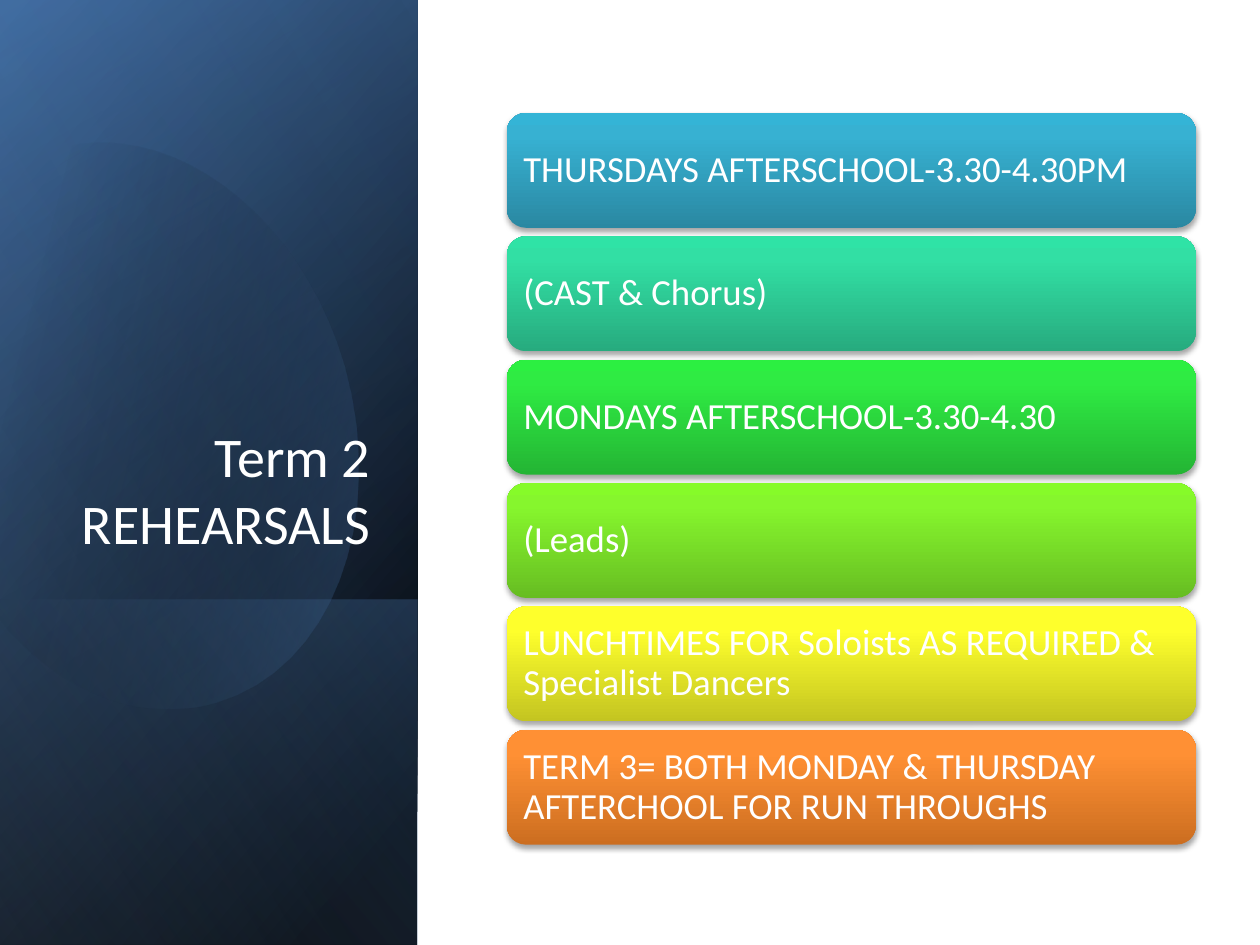
from math import cos, radians, sin

from pptx import Presentation
from pptx.dml.color import RGBColor
from pptx.enum.shapes import MSO_SHAPE as Shape
from pptx.enum.text import MSO_ANCHOR as Anchor, MSO_AUTO_SIZE as AutoSize, PP_ALIGN as Align
from pptx.oxml import parse_xml
from pptx.oxml.ns import nsdecls, qn
from pptx.util import Pt

BLACK = RGBColor(0x00, 0x00, 0x00)
WHITE = RGBColor(0xFF, 0xFF, 0xFF)
BLUE = RGBColor(0x4F, 0x81, 0xBD)
DARK_BLUE = RGBColor(0x37, 0x60, 0x92)
PALE_BLUE = RGBColor(0x95, 0xB3, 0xD7)
FONT = "Calibri"


def paint(shape, stops, angle):
    stop_xml = "".join(
        f'<a:gs pos="{position * 1000}"><a:srgbClr val="{color}">'
        f'<a:alpha val="{opacity * 1000}"/></a:srgbClr></a:gs>'
        for position, color, opacity in stops
    )
    gradient = parse_xml(
        f'<a:gradFill {nsdecls("a")} rotWithShape="1"><a:gsLst>{stop_xml}</a:gsLst>'
        f'<a:lin ang="{angle * 60000}" scaled="0"/></a:gradFill>'
    )
    shape.fill.background()
    properties = shape.element.spPr
    properties.replace(properties.find(qn("a:noFill")), gradient)
    shape.line.fill.background()
    shape.shadow.inherit = False


def add_panel(left, top, width, height, stops, angle):
    panel = shapes.add_shape(Shape.RECTANGLE, Pt(left), Pt(top), Pt(width), Pt(height))
    panel.rotation = 90
    panel.element.spPr.find(qn("a:xfrm")).set("flipH", "1")
    paint(panel, stops, angle)


presentation = Presentation()
presentation.slide_width = Pt(720)
presentation.slide_height = Pt(540)
slide = presentation.slides.add_slide(presentation.slide_layouts[5])
shapes = slide.shapes

SIDEBAR = (-150.7, 150.7, 540, 238.6)
add_panel(*SIDEBAR, [(8, BLACK, 100), (100, DARK_BLUE, 100)], 50)
add_panel(*SIDEBAR, [(0, BLACK, 0), (99, BLUE, 46)], 30)
add_panel(20.65, 322.05, 197.3, 238.6, [(2, BLUE, 29), (100, BLACK, 30)], 130)

OVAL_TILT = 343.9
OVAL_CENTER = (85.7, 240.8)
oval_start = (69, 82)
oval_curves = [
    [(123, 88), (176, 138), (196.5, 209)],
    [(221, 297), (189, 382), (123, 401)],
    [(82, 413), (38, 396), (5, 360)],
    [(-2, 351), (-2, 351), (-2, 351)],
    [(-18, 120), (-18, 120), (-18, 120)],
    [(-11, 111), (-11, 111), (-11, 111)],
    [(1, 99), (16, 90), (32, 85)],
    [(45, 81.5), (57, 80.5), (69, 82)],
]
outline = [oval_start]
for first, second, end in oval_curves:
    start = outline[-1]
    for step in range(1, 17):
        t = step / 16
        weights = ((1 - t) ** 3, 3 * t * (1 - t) ** 2, 3 * t**2 * (1 - t), t**3)
        corners = (start, first, second, end)
        outline.append(tuple(sum(w * c[axis] for w, c in zip(weights, corners)) for axis in (0, 1)))

turn = radians(360 - OVAL_TILT)
center_x, center_y = OVAL_CENTER
level_outline = [
    (
        Pt(center_x + (x - center_x) * cos(turn) - (y - center_y) * sin(turn)),
        Pt(center_y + (x - center_x) * sin(turn) + (y - center_y) * cos(turn)),
    )
    for x, y in outline
]
builder = shapes.build_freeform(*level_outline[0])
builder.add_line_segments(level_outline[1:], close=True)
oval = builder.convert_to_shape()
oval.rotation = OVAL_TILT
paint(oval, [(29, BLACK, 0), (100, BLUE, 43)], 30)

add_panel(*SIDEBAR, [(0, BLACK, 0), (99, PALE_BLUE, 11)], 120)

title = shapes.title
title.left, title.top, title.width, title.height = Pt(34.6), Pt(132.5), Pt(184.3), Pt(188.6)
shapes.element.append(title.element)
title_frame = title.text_frame
title_frame.text = "Term 2 REHEARSALS"
title_frame.word_wrap = True
title_frame.auto_size = AutoSize.NONE
title_frame.vertical_anchor = Anchor.BOTTOM
paragraph = title_frame.paragraphs[0]
paragraph.alignment = Align.RIGHT
paragraph.font.name = FONT
paragraph.font.size = Pt(32)
paragraph.font.color.rgb = WHITE

rehearsals = [
    ("THURSDAYS AFTERSCHOOL-3.30-4.30PM", "2A88A2", "37B1D2", "34B4D6"),
    ("(CAST & Chorus)", "27AB7E", "32DFA4", "2FE3A6"),
    ("MONDAYS AFTERSCHOOL-3.30-4.30", "24B534", "2FEB43", "2CEF41"),
    ("(Leads)", "67BD22", "86F62D", "86FB29"),
    ("LUNCHTIMES FOR Soloists AS REQUIRED & Specialist Dancers", "C4C521", "FEFF2C", "FEFF2D"),
    ("TERM 3= BOTH MONDAY & THURSDAY AFTERCHOOL FOR RUN THROUGHS", "CC6E20", "FF9034", "FF9136"),
]
BOX_TOP, BOX_HEIGHT, BOX_PITCH = 64.6, 65.6, 70.5
for index, (text, *colors) in enumerate(rehearsals):
    box = shapes.add_shape(
        Shape.ROUNDED_RECTANGLE, Pt(289.6), Pt(BOX_TOP + index * BOX_PITCH), Pt(393.8), Pt(BOX_HEIGHT)
    )
    stops = [(position, RGBColor.from_string(color), 100) for position, color in zip((0, 80, 100), colors)]
    paint(box, stops, 270)
    box.element.spPr.find(qn("a:effectLst")).append(parse_xml(
        f'<a:outerShdw {nsdecls("a")} blurRad="{Pt(3.1)}" dist="{Pt(1.8)}" dir="5400000" rotWithShape="0">'
        f'<a:srgbClr val="{BLACK}"><a:alpha val="35000"/></a:srgbClr></a:outerShdw>'
    ))
    frame = box.text_frame
    frame.text = text
    frame.word_wrap = True
    frame.vertical_anchor = Anchor.MIDDLE
    frame.margin_left = frame.margin_right = frame.margin_top = frame.margin_bottom = Pt(6.3)
    paragraph = frame.paragraphs[0]
    paragraph.alignment = Align.LEFT
    paragraph.line_spacing = 0.9
    paragraph.font.name = FONT
    paragraph.font.size = Pt(21)
    paragraph.font.color.rgb = WHITE

presentation.save("out.pptx")
